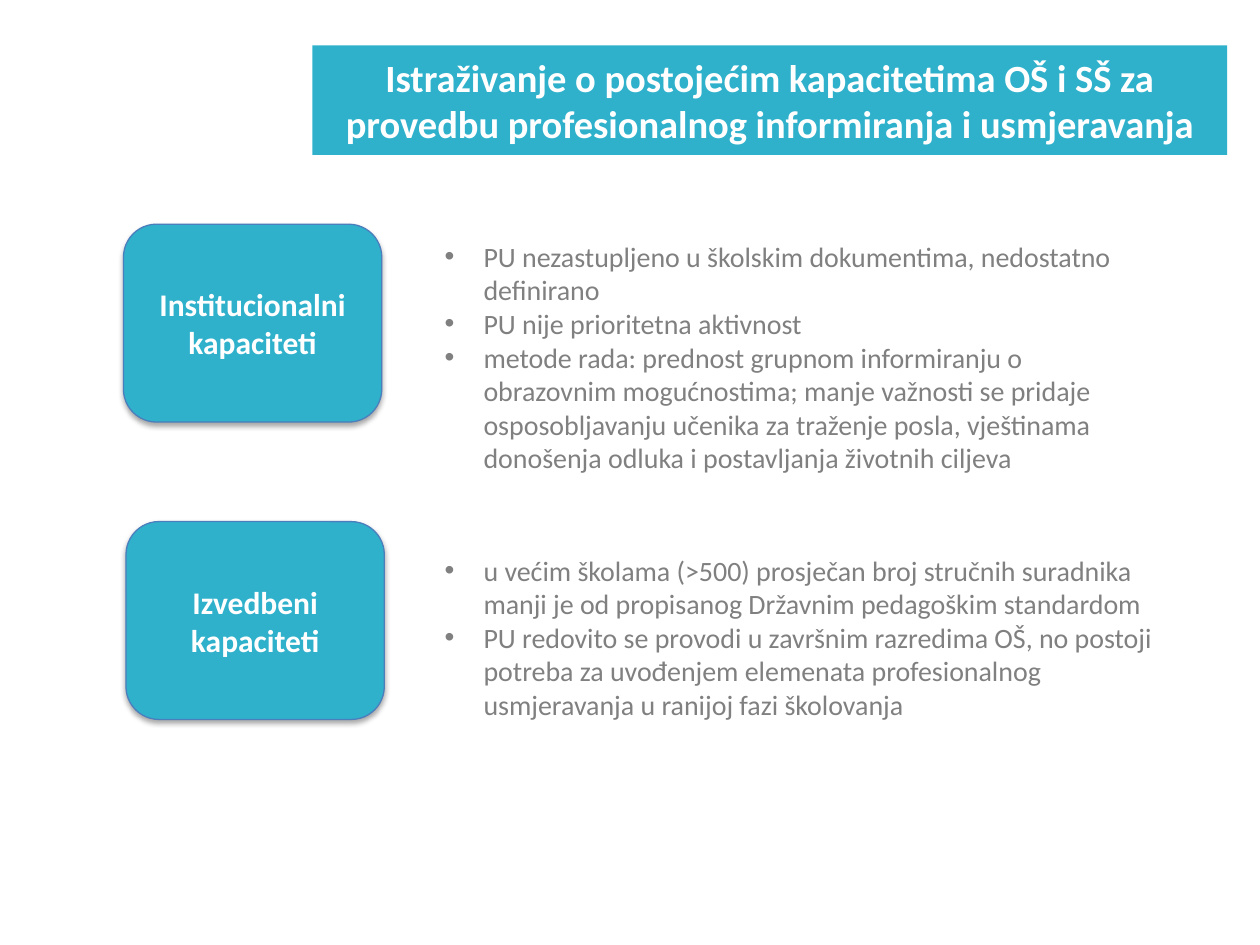
from dataclasses import dataclass

from lxml.etree import SubElement
from pptx import Presentation
from pptx.dml.color import RGBColor
from pptx.enum.shapes import MSO_SHAPE
from pptx.enum.text import MSO_ANCHOR, PP_ALIGN
from pptx.oxml import parse_xml
from pptx.oxml.ns import nsdecls, qn
from pptx.util import Inches, Pt

TITLE = "Istraživanje o postojećim kapacitetima OŠ i SŠ za provedbu profesionalnog informiranja i usmjeravanja"
TITLE_AREA = (2.48, 0.36, 7.26, 0.87)
SECTIONS = [
    {
        "label": "Institucionalni kapaciteti",
        "label_at": (0.98, 1.78),
        "list_top": 1.85,
        "list_height": 1.99,
        "points": [
            "PU nezastupljeno u školskim dokumentima, nedostatno definirano",
            "PU nije prioritetna aktivnost",
            "metode rada: prednost grupnom informiranju o obrazovnim mogućnostima; manje važnosti se pridaje "
            "osposobljavanju učenika za traženje posla, vještinama donošenja odluka i postavljanja životnih ciljeva",
        ],
    },
    {
        "label": "Izvedbeni kapaciteti",
        "label_at": (1, 4.14),
        "list_top": 4.34,
        "list_height": 1.45,
        "points": [
            "u većim školama (>500) prosječan broj stručnih suradnika manji je od propisanog "
            "Državnim pedagoškim standardom",
            "PU redovito se provodi u završnim razredima OŠ, no postoji potreba za uvođenjem elemenata "
            "profesionalnog usmjeravanja u ranijoj fazi školovanja",
        ],
    },
]
LABEL_SIZE = (2.05, 1.57)
LIST_LEFT, LIST_WIDTH = 3.43, 5.83
INDENT = 0.31


@dataclass(frozen=True)
class Theme:
    teal: RGBColor = RGBColor.from_string("2FB1CC")
    outline: RGBColor = RGBColor.from_string("4B7EBC")
    white: RGBColor = RGBColor.from_string("FFFFFF")
    gray: RGBColor = RGBColor.from_string("808080")
    font: str = "Calibri"
    title_size: int = 22
    label_size: int = 18
    list_size: int = 16


THEME = Theme()


def apply_format(target, values):
    for name, value in values.items():
        setattr(target, name, value)


def write_paragraph(para, text, size, color, bold=False):
    span = para.add_run()
    span.text = text
    apply_format(span.font, {"name": THEME.font, "size": Pt(size), "bold": bold})
    span.font.color.rgb = color


def add_panel(page, kind, area, text, size):
    panel = page.shapes.add_shape(kind, *map(Inches, area))
    panel.shadow.inherit = False
    panel.fill.solid()
    panel.fill.fore_color.rgb = THEME.teal
    panel.line.fill.background()
    apply_format(panel.text_frame, {"word_wrap": True, "vertical_anchor": MSO_ANCHOR.MIDDLE})
    para = panel.text_frame.paragraphs[0]
    para.alignment = PP_ALIGN.CENTER
    write_paragraph(para, text, size, THEME.white, True)
    return panel


def add_label(page, section):
    area = section["label_at"] + LABEL_SIZE
    label = add_panel(page, MSO_SHAPE.ROUNDED_RECTANGLE, area, section["label"], THEME.label_size)
    label.line.color.rgb = THEME.outline
    label.line.width = Pt(0.75)
    effects = label._element.spPr.find(qn("a:effectLst"))
    effects.append(parse_xml(
        f'<a:outerShdw {nsdecls("a")} blurRad="{Pt(3.1)}" dist="{Pt(1.8)}" dir="5400000" rotWithShape="0">'
        '<a:srgbClr val="000000"><a:alpha val="35000"/></a:srgbClr></a:outerShdw>'
    ))


def add_list(page, section):
    area = (LIST_LEFT, section["list_top"], LIST_WIDTH, section["list_height"])
    box = page.shapes.add_textbox(*map(Inches, area))
    box.text_frame.word_wrap = True
    for index, point in enumerate(section["points"]):
        para = box.text_frame.add_paragraph() if index else box.text_frame.paragraphs[0]
        properties = para._p.get_or_add_pPr()
        properties.set("marL", str(Inches(INDENT)))
        properties.set("indent", str(-Inches(INDENT)))
        SubElement(properties, qn("a:buFont"), typeface="Arial")
        SubElement(properties, qn("a:buChar"), char="•")
        write_paragraph(para, point, THEME.list_size, THEME.gray)


def main():
    """Build the slide on school capacities for career guidance."""
    deck = Presentation()
    apply_format(deck, {"slide_width": Inches(10), "slide_height": Inches(7.5)})
    page = deck.slides.add_slide(deck.slide_layouts[6])
    add_panel(page, MSO_SHAPE.RECTANGLE, TITLE_AREA, TITLE, THEME.title_size)
    for section in SECTIONS:
        add_list(page, section)
        add_label(page, section)
    deck.save("out.pptx")


if __name__ == "__main__":
    main()
